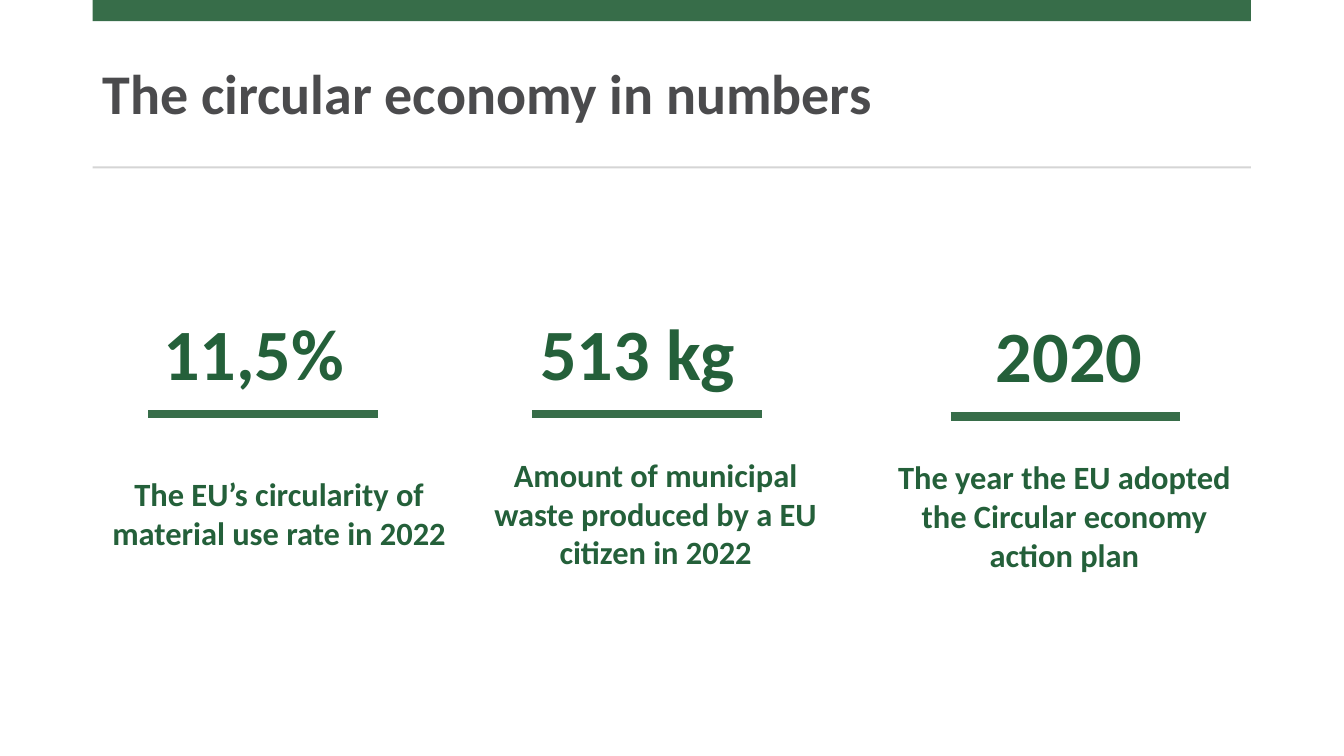
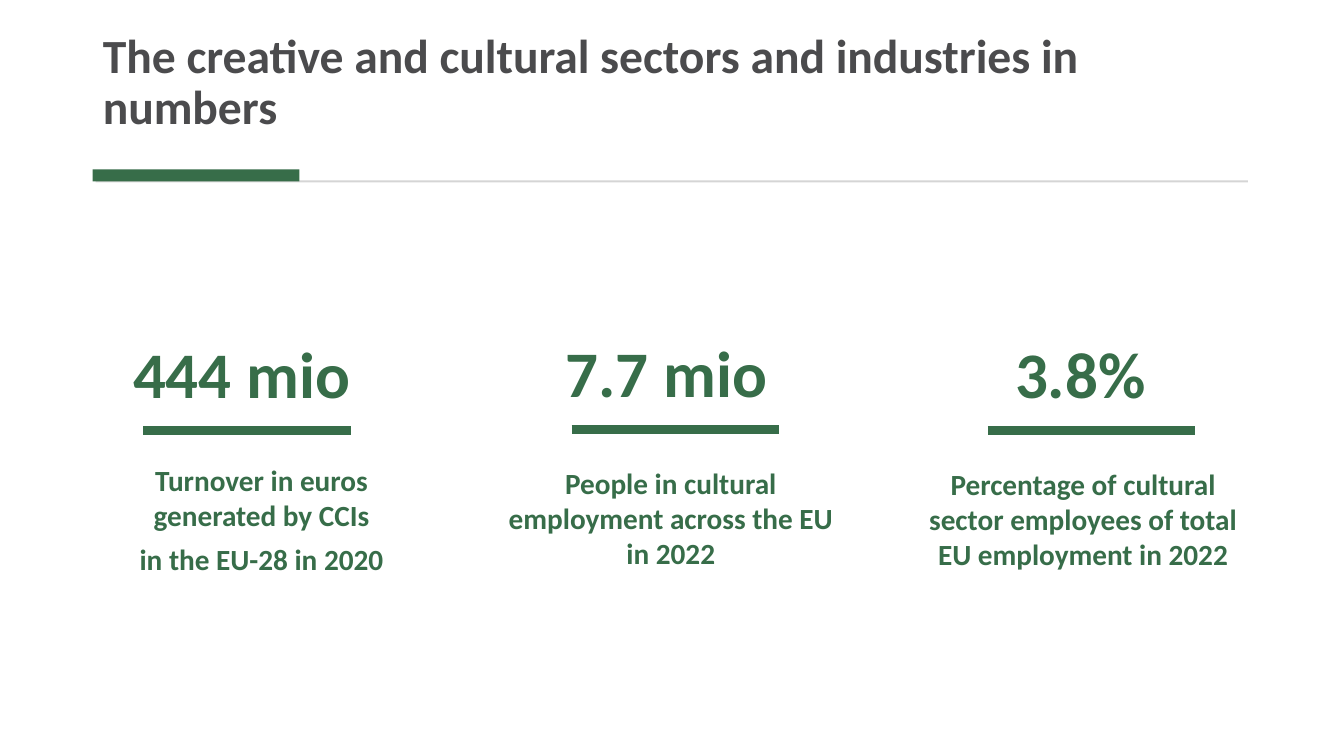
from dataclasses import dataclass

from lxml.etree import SubElement
from pptx import Presentation
from pptx.dml.color import RGBColor
from pptx.enum.shapes import MSO_CONNECTOR, MSO_SHAPE
from pptx.enum.text import MSO_ANCHOR, MSO_AUTO_SIZE, PP_ALIGN
from pptx.oxml.ns import qn
from pptx.slide import Slide
from pptx.text.text import TextFrame, _Paragraph
from pptx.util import Emu, Inches, Pt

SLIDE_WIDTH, SLIDE_HEIGHT = Inches(13.33), Inches(7.5)
COLUMNS, ROWS = 40, 30
MARGIN, CONTENT_WIDTH = 2.76, 34.47  # columns
PARAGRAPH_GAP = 0.33  # rows


@dataclass(frozen=True)
class Theme:
    font: str = "Calibri"
    heading: str = "4B4B4D"
    green: str = "376D49"
    dark_green: str = "24603A"
    hairline: str = "D5D5D5"
    rule_weight: float = 6
    space_after: float = 6
    title_spacing: float = 0.9


THEME = Theme()


@dataclass(frozen=True)
class Box:
    """An area in grid units: columns across, rows down."""
    left: float
    top: float
    width: float
    height: float

    def emu(self) -> tuple[Emu, Emu, Emu, Emu]:
        return across(self.left), down(self.top), across(self.width), down(self.height)


@dataclass(frozen=True)
class Band:
    box: Box
    color: str


@dataclass(frozen=True)
class Figure:
    value: str
    value_left: float
    value_width: float
    rule_left: float
    rule_row: float
    caption: tuple[str, ...]
    caption_left: float
    caption_width: float
    caption_lines: int = 3


@dataclass(frozen=True)
class FigureStyle:
    """Type sizes, and row distances measured from the rule of a figure."""
    color: str
    value_size: float
    value_height: float
    value_rise: float
    rule_width: float
    caption_size: float
    caption_line: float
    caption_drop: float


@dataclass(frozen=True)
class NumbersPage:
    title: str
    title_box: Box
    title_size: float
    title_anchor: MSO_ANCHOR
    bands: tuple[Band, ...]
    style: FigureStyle
    figures: tuple[Figure, ...]


PAGES = (
    NumbersPage(
        "The circular economy in numbers",
        Box(MARGIN, 1.48, CONTENT_WIDTH, 4.72), 40, MSO_ANCHOR.MIDDLE,
        (
            Band(Box(MARGIN, 0, CONTENT_WIDTH, 0.84), THEME.green),
            Band(Box(MARGIN, 6.6, CONTENT_WIDTH, 0.08), THEME.hairline),
        ),
        FigureStyle(THEME.dark_green, 51.6, 3.48, 2.5, 6.84, 23.2, 1.56, 3.92),
        (
            Figure("11,5%", 4.86, 5.94, 4.41, 16.44,
                   ("The EU’s circularity of material use rate in 2022",),
                   MARGIN, 11.1, caption_lines=2),
            Figure("513 kg", 16.08, 6.36, 15.84, 16.44,
                   ("Amount of municipal waste produced by a EU citizen in 2022",),
                   14.43, 10.17),
            Figure("2020", 29.64, 4.89, 28.29, 16.52,
                   ("The year the EU adopted the Circular economy action plan",),
                   26.13, 11.1),
        ),
    ),
    NumbersPage(
        "The creative and cultural sectors and industries in numbers",
        Box(MARGIN, 1.12, CONTENT_WIDTH, 4.44), 34, MSO_ANCHOR.BOTTOM,
        (
            Band(Box(2.85, 7.16, 34.29, 0.08), THEME.hairline),
            Band(Box(MARGIN, 6.72, 6.15, 0.48), THEME.green),
        ),
        FigureStyle(THEME.green, 46.4, 3.16, 2.28, 6.18, 20.9, 1.41, 3.52),
        (
            Figure("444 mio", 3.96, 6.57, 4.26, 17.08,
                   ("Turnover in euros generated by CCIs", "in the EU-28 in 2020"),
                   MARGIN, 10.05),
            Figure("7.7 mio", 16.83, 6.54, 17.01, 17.04,
                   ("People in cultural employment across the EU in 2022",),
                   14.94, 10.05),
            Figure("3.8%", 30.21, 3.96, 29.4, 17.08,
                   ("Percentage of cultural sector employees of total EU employment in 2022",),
                   27.21, 10.05),
        ),
    ),
)


def across(columns: float) -> Emu:
    return Emu(round(SLIDE_WIDTH * columns / COLUMNS))


def down(rows: float) -> Emu:
    return Emu(round(SLIDE_HEIGHT * rows / ROWS))


def add_bold_run(paragraph: _Paragraph, text: str, size: float, color: str) -> None:
    run = paragraph.add_run()
    run.text = text
    run.font.name = THEME.font
    run.font.size = Pt(size)
    run.font.bold = True
    run.font.color.rgb = RGBColor.from_string(color)


def fill_title(slide: Slide, page: NumbersPage) -> None:
    title = slide.shapes.title
    title.left, title.top, title.width, title.height = page.title_box.emu()
    frame = title.text_frame
    frame.auto_size = MSO_AUTO_SIZE.NONE
    frame.vertical_anchor = page.title_anchor
    paragraph = frame.paragraphs[0]
    paragraph.alignment = PP_ALIGN.LEFT
    paragraph.line_spacing = THEME.title_spacing
    add_bold_run(paragraph, page.title, page.title_size, THEME.heading)


def add_band(slide: Slide, band: Band) -> None:
    bar = slide.shapes.add_shape(MSO_SHAPE.RECTANGLE, *band.box.emu())
    bar.shadow.inherit = False
    bar.fill.solid()
    bar.fill.fore_color.rgb = RGBColor.from_string(band.color)
    bar.line.fill.background()


def add_text(slide: Slide, box: Box, lines: tuple[str, ...], size: float, color: str,
             alignment: PP_ALIGN, wrap: bool) -> None:
    frame: TextFrame = slide.shapes.add_textbox(*box.emu()).text_frame
    frame.margin_left = frame.margin_right = frame.margin_top = frame.margin_bottom = 0
    frame.vertical_anchor = MSO_ANCHOR.MIDDLE
    frame.word_wrap = wrap
    frame.auto_size = MSO_AUTO_SIZE.SHAPE_TO_FIT_TEXT
    for index, line in enumerate(lines):
        paragraph = frame.add_paragraph() if index else frame.paragraphs[0]
        paragraph.alignment = alignment
        paragraph.space_after = Pt(THEME.space_after)
        add_bold_run(paragraph, line, size, color)


def add_rule(slide: Slide, left: float, row: float, width: float) -> None:
    rule = slide.shapes.add_connector(
        MSO_CONNECTOR.STRAIGHT, across(left), down(row), across(left + width), down(row))
    rule.line.color.rgb = RGBColor.from_string(THEME.green)
    rule.line.width = Pt(THEME.rule_weight)
    SubElement(rule._element.spPr, qn("a:effectLst"))


def add_figure(slide: Slide, figure: Figure, style: FigureStyle) -> None:
    """Place the value above its rule and the caption below, both centred on fixed distances."""
    value_top = figure.rule_row - style.value_rise - style.value_height / 2
    add_text(slide, Box(figure.value_left, value_top, figure.value_width, style.value_height),
             (figure.value,), style.value_size, style.color, PP_ALIGN.LEFT, wrap=False)
    add_rule(slide, figure.rule_left, figure.rule_row, style.rule_width)
    caption_height = (figure.caption_lines * style.caption_line
                      + (len(figure.caption) - 1) * PARAGRAPH_GAP)
    caption_top = figure.rule_row + style.caption_drop - caption_height / 2
    add_text(slide, Box(figure.caption_left, caption_top, figure.caption_width, caption_height),
             figure.caption, style.caption_size, style.color, PP_ALIGN.CENTER, wrap=True)


def main() -> None:
    deck = Presentation()
    deck.slide_width, deck.slide_height = SLIDE_WIDTH, SLIDE_HEIGHT
    title_only = deck.slide_layouts.get_by_name("Title Only")
    for page in PAGES:
        slide = deck.slides.add_slide(title_only)
        fill_title(slide, page)
        for band in page.bands:
            add_band(slide, band)
        for figure in page.figures:
            add_figure(slide, figure, page.style)
    deck.save("out.pptx")


if __name__ == "__main__":
    main()
